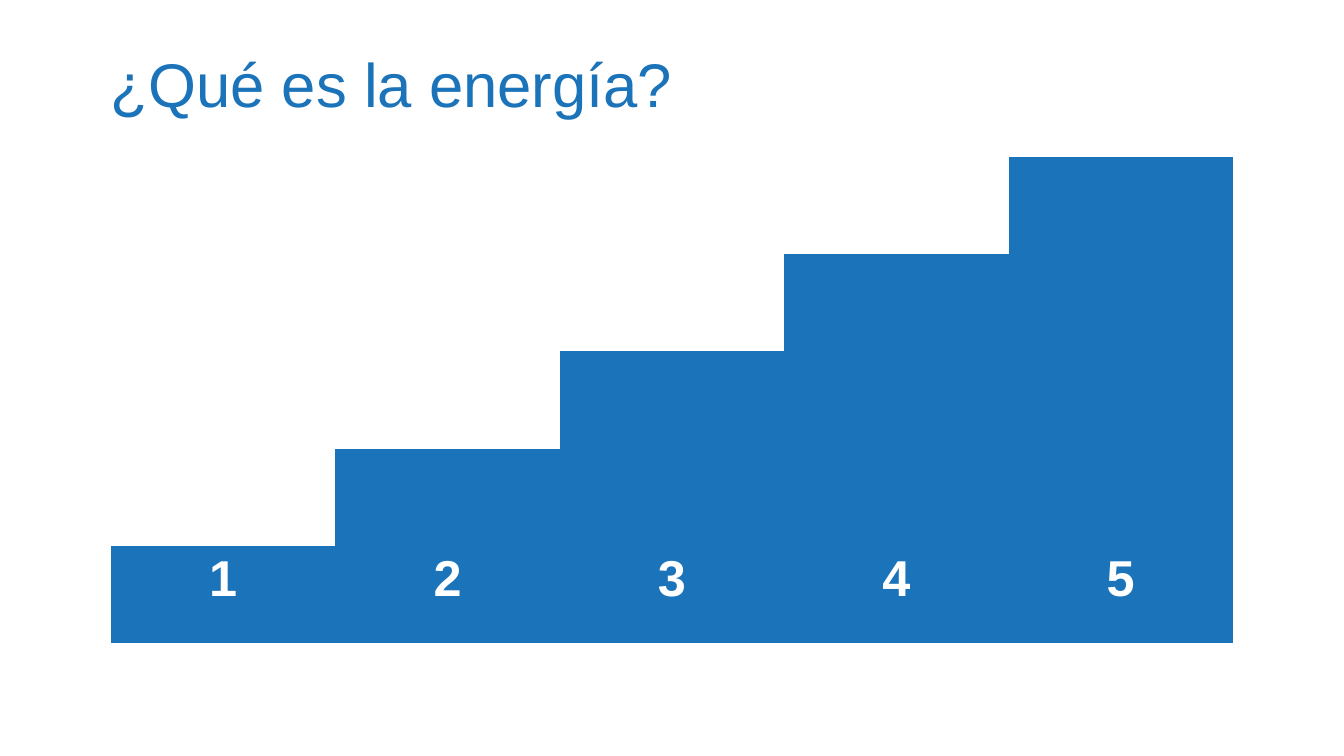
from dataclasses import dataclass

from pptx import Presentation
from pptx import util as u
from pptx.dml.color import RGBColor
from pptx.enum import text
from pptx.oxml.ns import qn

EMU_PER_PX = 914400 / 100.8
NO_STYLE_NO_GRID = "{2D5ABB26-0587-4C30-8999-92F81FD0307C}"


@dataclass(frozen=True)
class Theme:
    blue: RGBColor = RGBColor(0x1B, 0x73, 0xB9)
    white: RGBColor = RGBColor(0xFF, 0xFF, 0xFF)
    font: str = "Arial"
    title_size: int = 44
    label_size: int = 36


@dataclass(frozen=True)
class Box:
    left: int
    top: int
    width: int
    height: int

    def emu(self) -> tuple:
        return tuple(px(n) for n in (self.left, self.top, self.width, self.height))


@dataclass(frozen=True)
class Step:
    label: str
    height: int


THEME = Theme()
PAGE = Box(0, 0, 1344, 756)
TITLE = Box(111, 54, 1087, 142)
STAIRS = Box(111, 157, 1122, 486)
STEPS = [Step(str(n), n) for n in range(1, 6)]


def px(length: int) -> int:
    return u.Emu(round(length * EMU_PER_PX))


def style_text(para, size: int, color: RGBColor, bold: bool, align) -> None:
    para.alignment = align
    for span in para.runs:
        span.font.name = THEME.font
        span.font.size = u.Pt(size)
        span.font.bold = bold
        span.font.color.rgb = color


def add_title(page, wording: str) -> None:
    title = page.shapes.title
    title.left, title.top, title.width, title.height = TITLE.emu()
    frame = title.text_frame
    frame.text = wording
    frame.word_wrap = True
    frame.auto_size = text.MSO_AUTO_SIZE.NONE
    frame.vertical_anchor = text.MSO_ANCHOR.TOP
    frame.margin_left = frame.margin_right = 0
    frame.margin_top = frame.margin_bottom = 0
    para = frame.paragraphs[0]
    para.line_spacing = 0.9
    style_text(para, THEME.title_size, THEME.blue, False, text.PP_ALIGN.LEFT)


def add_stairs(page, steps: list[Step]) -> None:
    """Fill each column from the bottom up to the height of its step."""
    row_count = max(step.height for step in steps)
    table = page.shapes.add_table(row_count, len(steps), *STAIRS.emu()).table
    table.first_row = table.horz_banding = False
    table._tbl.tblPr.find(qn("a:tableStyleId")).text = NO_STYLE_NO_GRID
    for column, step in enumerate(steps):
        for row in range(row_count):
            fill = table.cell(row, column).fill
            if row >= row_count - step.height:
                fill.solid()
                fill.fore_color.rgb = THEME.blue
            else:
                fill.background()
        base = table.cell(row_count - 1, column)
        base.text_frame.text = step.label
        style_text(base.text_frame.paragraphs[0], THEME.label_size,
                   THEME.white, True, text.PP_ALIGN.CENTER)


def main() -> None:
    deck = Presentation()
    deck.slide_width, deck.slide_height = px(PAGE.width), px(PAGE.height)
    page = deck.slides.add_slide(deck.slide_layouts.get_by_name("Title Only"))
    add_title(page, "¿Qué es la energía?")
    add_stairs(page, STEPS)
    deck.save("out.pptx")


if __name__ == "__main__":
    main()
